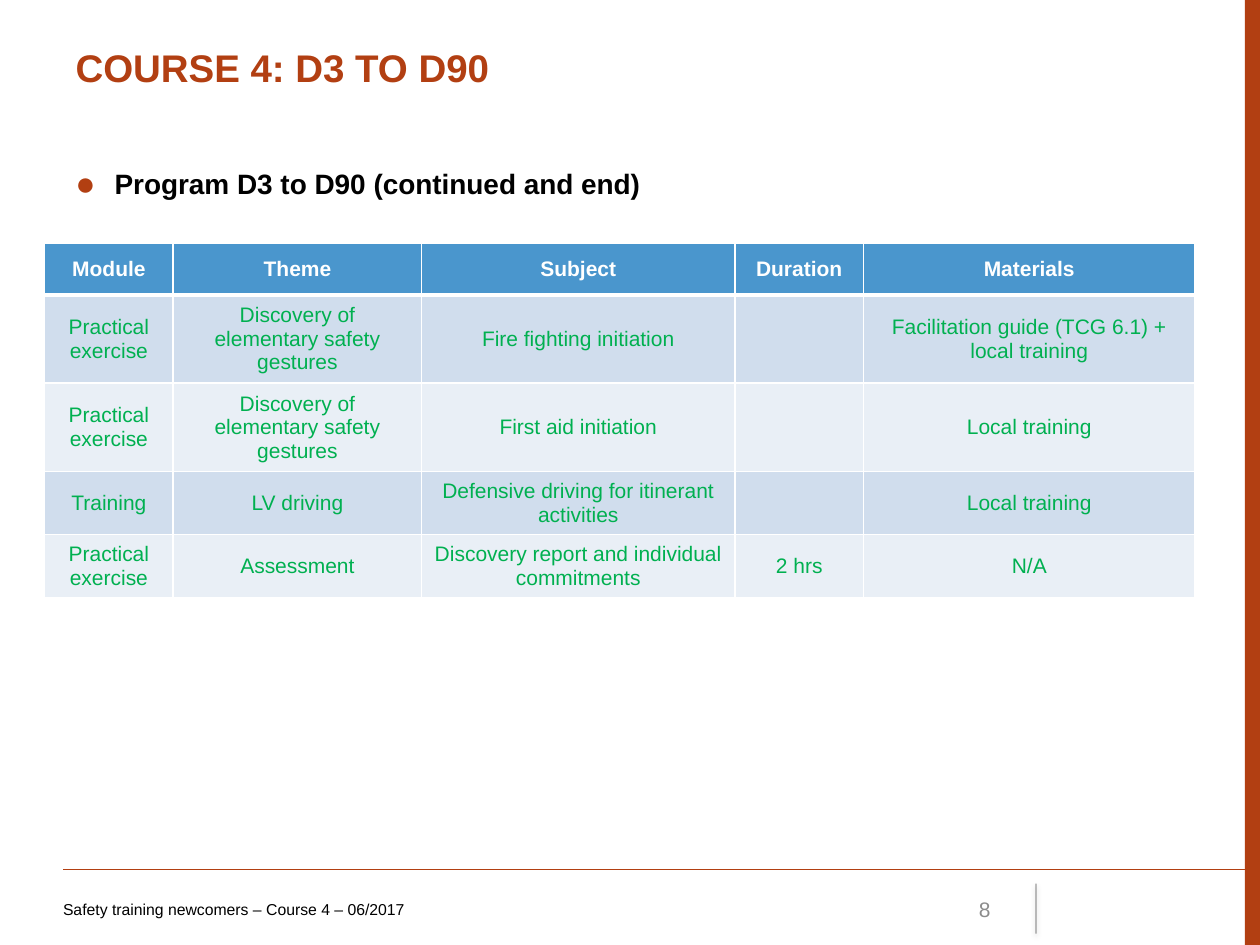
from lxml import etree
from pptx import Presentation, util as u
from pptx.dml.color import RGBColor
from pptx.enum import shapes, text
from pptx.oxml import ns, parse_xml

Pt = u.Pt
C = {"rust": "B23F12", "black": "000000", "grey": "8C8C8C", "white": "FFFFFF",
     "green": "00B050", "head": "4A96CD", "odd": "D0DDED", "even": "E9EFF6"}
A = 'xmlns:a="http://schemas.openxmlformats.org/drawingml/2006/main"'
TOP, MIDDLE = text.MSO_ANCHOR.TOP, text.MSO_ANCHOR.MIDDLE
LEFT, CENTER, RIGHT = text.PP_ALIGN.LEFT, text.PP_ALIGN.CENTER, text.PP_ALIGN.RIGHT


def write(tf, words, size=12, color="black", bold=False, align=LEFT, anchor=MIDDLE):
    tf.word_wrap = True
    tf.vertical_anchor = anchor
    p = tf.paragraphs[0]
    p.alignment = align
    r = p.add_run()
    r.text = words
    r.font.name, r.font.size, r.font.bold = "Arial", Pt(size), bold
    r.font.color.rgb = RGBColor.from_string(C[color])
    return p


def add_line(s, x1, y1, x2, y2, color, width, effects=""):
    line = s.shapes.add_connector(shapes.MSO_CONNECTOR.STRAIGHT,
                                  Pt(x1), Pt(y1), Pt(x2), Pt(y2))
    line.line.color.rgb = RGBColor.from_string(C[color])
    line.line.width = Pt(width)
    line._element.spPr.append(parse_xml(f"<a:effectLst {A}>{effects}</a:effectLst>"))
    return line


prs = Presentation()
prs.slide_width, prs.slide_height = Pt(720), Pt(540)
s = prs.slides.add_slide(prs.slide_layouts[5])

# Side bar and footer rules
bar = s.shapes.add_shape(shapes.MSO_SHAPE.RECTANGLE, Pt(711.4), 0, Pt(8.6), Pt(540))
bar.shadow.inherit = False
bar.fill.solid()
bar.fill.fore_color.rgb = RGBColor.from_string(C["rust"])
bar.line.fill.background()
add_line(s, 36, 497, 720, 497, "rust", 0.75)
divider = add_line(
    s, 592, 505, 592, 533.5, "black", 0.5,
    '<a:outerShdw blurRad="39370" dist="20320" dir="5400000" rotWithShape="0">'
    '<a:srgbClr val="000000"><a:alpha val="38000"/></a:srgbClr></a:outerShdw>')
rgb = divider._element.spPr.find(".//" + ns.qn("a:ln")).find(".//" + ns.qn("a:srgbClr"))
etree.SubElement(rgb, ns.qn("a:alpha")).set("val", "70000")

# Title
title = s.shapes.title
title.left, title.top, title.width, title.height = Pt(36), Pt(21.6), Pt(647.3), Pt(49.7)
title.text_frame.auto_size = text.MSO_AUTO_SIZE.NONE
write(title.text_frame, "COURSE 4: D3 TO D90", size=22, color="rust", bold=True, anchor=TOP)

# Bulleted heading
tf = s.shapes.add_textbox(Pt(36), Pt(88.6), Pt(647.3), Pt(33.8)).text_frame
tf.margin_top = Pt(6.6)
p = write(tf, "Program D3 to D90 (continued and end)", size=16, bold=True, anchor=TOP)
pPr = p._p.get_or_add_pPr()
pPr.set("marL", str(Pt(22.4)))
pPr.set("indent", str(-Pt(22.4)))
for bullet in (f'<a:buClr {A}><a:srgbClr val="{C["rust"]}"/></a:buClr>',
               f'<a:buSzPct {A} val="120000"/>',
               f'<a:buFont {A} typeface="Arial"/>',
               f'<a:buChar {A} char="●"/>'):
    pPr.append(parse_xml(bullet))

# Program table
gestures = "Discovery of elementary safety gestures"
rows = [
    ["Module", "Theme", "Subject", "Duration", "Materials"],
    ["Practical exercise", gestures, "Fire fighting initiation", "",
     "Facilitation guide (TCG 6.1) + local training"],
    ["Practical exercise", gestures, "First aid initiation", "", "Local training"],
    ["Training", "LV driving", "Defensive driving for itinerant activities", "",
     "Local training"],
    ["Practical exercise", "Assessment", "Discovery report and individual commitments",
     "2 hrs", "N/A"],
]
widths = [73.5, 142, 179, 73.5, 189.5]
table = s.shapes.add_table(len(rows), len(widths), Pt(25.5), Pt(139),
                           Pt(sum(widths)), Pt(29.5 * len(rows))).table
for column, width in zip(table.columns, widths):
    column.width = Pt(width)
for i, row in enumerate(rows):
    table.rows[i].height = Pt(29.5)
    fill = "head" if i == 0 else "odd" if i % 2 else "even"
    for j, words in enumerate(row):
        cell = table.cell(i, j)
        cell.vertical_anchor = MIDDLE
        tcPr = cell._tc.get_or_add_tcPr()
        for side in "LRTB":
            thick = (i, side) in ((0, "B"), (1, "T"))
            tcPr.append(parse_xml(
                f'<a:ln{side} {A} w="{Pt(3 if thick else 1)}"><a:solidFill>'
                f'<a:srgbClr val="{C["white"]}"/></a:solidFill></a:ln{side}>'))
        cell.fill.solid()
        cell.fill.fore_color.rgb = RGBColor.from_string(C[fill])
        if words:
            write(cell.text_frame, words, color="green" if i else "white",
                  bold=i == 0, align=CENTER)

# Footer text and page number
tf = s.shapes.add_textbox(Pt(36), Pt(505), Pt(437.8), Pt(28.8)).text_frame
tf.margin_left = 0
write(tf, "Safety training newcomers – Course 4 – 06/2017", size=9)
tf = s.shapes.add_textbox(Pt(516.2), Pt(505), Pt(56.9), Pt(28.8)).text_frame
write(tf, "8", color="grey", align=RIGHT)

prs.save("out.pptx")
